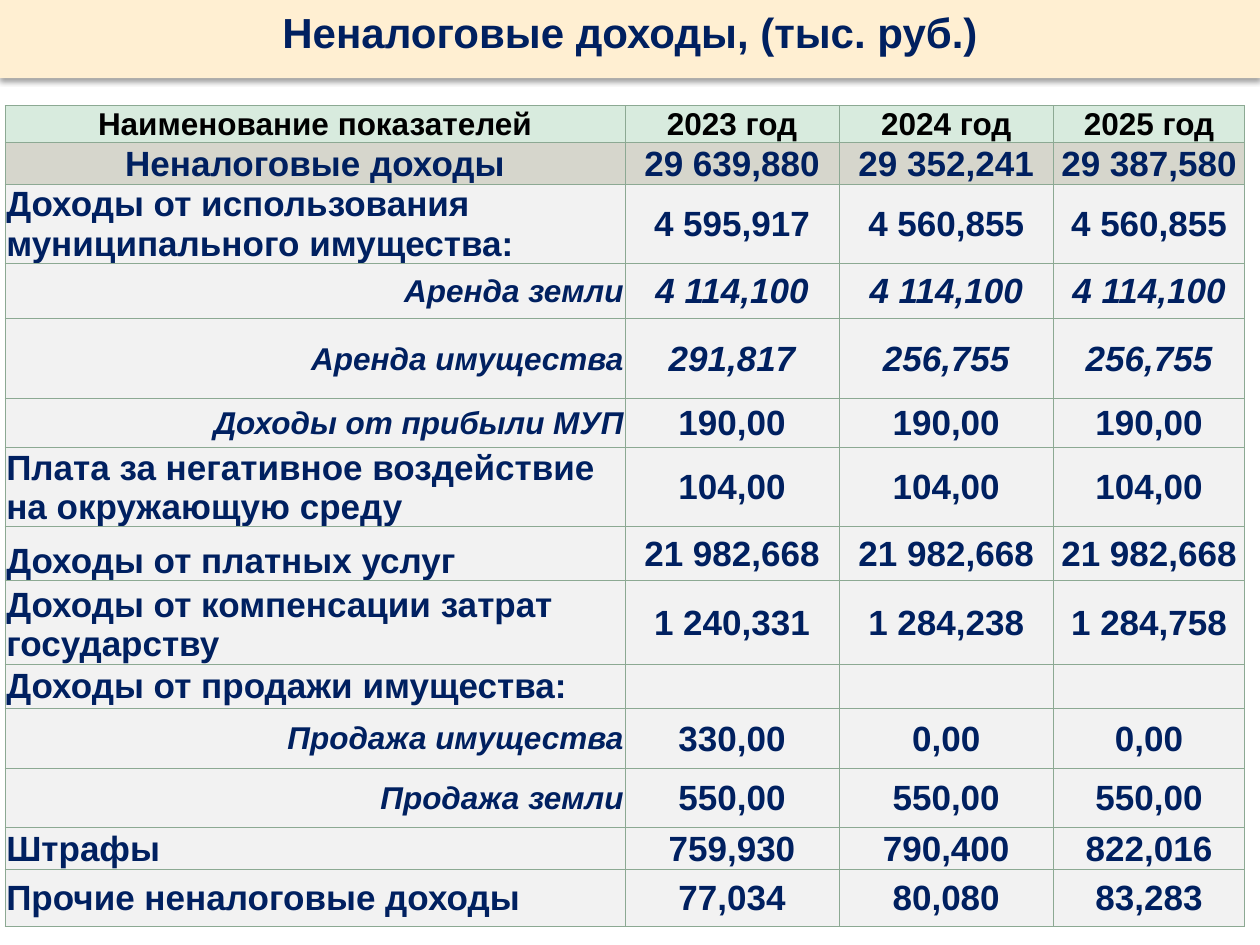
from lxml.etree import SubElement
from pptx import Presentation
from pptx.dml.color import RGBColor
from pptx.enum.text import MSO_ANCHOR, MSO_AUTO_SIZE, PP_ALIGN
from pptx.oxml import parse_xml
from pptx.oxml.ns import nsdecls, qn
from pptx.util import Inches, Pt

SLIDE_WIDTH, SLIDE_HEIGHT = Inches(10), Inches(7.5)
COLORS = {
    "navy": "002060", "black": "000000", "cream": "FFEFD2", "mint": "D8EBDE",
    "total": "D6D6CC", "body": "F2F2F2", "border": "8CA993",
}
COLUMN_WIDTHS = [4.92, 1.7, 1.7, 1.52]

# kind, row height, label, values for the three years
INCOME_ROWS = [
    ("header", 0.29, "Наименование показателей", ["2023 год", "2024 год", "2025 год"]),
    ("total", 0.33, "Неналоговые доходы", ["29 639,880", "29 352,241", "29 387,580"]),
    ("group", 0.63, "Доходы от использования муниципального имущества:",
     ["4 595,917", "4 560,855", "4 560,855"]),
    ("rent", 0.44, "Аренда земли", ["4 114,100"] * 3),
    ("rent", 0.63, "Аренда имущества", ["291,817", "256,755", "256,755"]),
    ("detail", 0.39, "Доходы от прибыли МУП", ["190,00"] * 3),
    ("group", 0.63, "Плата за негативное воздействие на окружающую среду", ["104,00"] * 3),
    ("group", 0.43, "Доходы от платных услуг", ["21 982,668"] * 3),
    ("group", 0.66, "Доходы от компенсации затрат государству",
     ["1 240,331", "1 284,238", "1 284,758"]),
    ("line", 0.33, "Доходы от продажи имущества:", ["", "", ""]),
    ("detail", 0.48, "Продажа имущества", ["330,00", "0,00", "0,00"]),
    ("detail", 0.47, "Продажа земли", ["550,00"] * 3),
    ("line", 0.33, "Штрафы", ["759,930", "790,400", "822,016"]),
    ("line", 0.45, "Прочие неналоговые доходы", ["77,034", "80,080", "83,283"]),
]

HEADER = {"size": 18, "color": "black"}
SUBITEM = {"size": 18, "italic": True, "align": PP_ALIGN.RIGHT}
LABEL_FORMATS = {
    "header": HEADER, "total": {}, "rent": SUBITEM, "detail": SUBITEM,
    "group": {"align": PP_ALIGN.LEFT}, "line": {"align": PP_ALIGN.LEFT},
}
VALUE_FORMATS = {"header": HEADER, "rent": {"italic": True}}
ROW_FILLS = {"header": "mint", "total": "total"}
BOTTOM_LABELS = {"total", "group"}


def rgb(name):
    return RGBColor.from_string(COLORS[name])


def write_text(frame, text, size=20, color="navy", italic=False, align=PP_ALIGN.CENTER):
    paragraph = frame.paragraphs[0]
    paragraph.alignment = align
    if not text:
        paragraph.font.size = Pt(size)
        return
    run = paragraph.add_run()
    run.text = text
    font = run.font
    font.name, font.size, font.bold, font.italic = "Arial", Pt(size), True, italic
    font.color.rgb = rgb(color)


def add_shadow(shape):
    shape._element.spPr.append(parse_xml(
        f'<a:effectLst {nsdecls("a")}>'
        f'<a:outerShdw blurRad="{Pt(3.1)}" dist="{Pt(2)}" dir="5400000" rotWithShape="0">'
        '<a:srgbClr val="000000"><a:alpha val="38000"/></a:srgbClr>'
        '</a:outerShdw></a:effectLst>'))


def format_title(title, text):
    title.left = title.top = 0
    title.width, title.height = SLIDE_WIDTH, Inches(0.62)
    title.fill.solid()
    title.fill.fore_color.rgb = rgb("cream")
    title.line.fill.background()
    add_shadow(title)
    frame = title.text_frame
    frame.auto_size = MSO_AUTO_SIZE.NONE
    frame.vertical_anchor = MSO_ANCHOR.TOP
    write_text(frame, text, size=24)


def add_borders(cell):
    properties = cell._tc.get_or_add_tcPr()
    for side in ("lnL", "lnR", "lnT", "lnB"):
        border = SubElement(properties, qn(f"a:{side}"), w=str(Pt(0.5)))
        fill = SubElement(border, qn("a:solidFill"))
        SubElement(fill, qn("a:srgbClr"), val=COLORS["border"])


def format_cell(cell, text, fill, anchor, text_format):
    cell.margin_left = cell.margin_right = cell.margin_top = Inches(0.01)
    cell.margin_bottom = 0
    cell.vertical_anchor = anchor
    add_borders(cell)
    cell.fill.solid()
    cell.fill.fore_color.rgb = rgb(fill)
    write_text(cell.text_frame, text, **text_format)


def add_income_table(slide):
    table_height = sum(height for _, height, _, _ in INCOME_ROWS)
    table = slide.shapes.add_table(
        len(INCOME_ROWS), len(COLUMN_WIDTHS), Inches(0.04), Inches(0.84),
        Inches(sum(COLUMN_WIDTHS)), Inches(table_height)).table
    for column, width in zip(table.columns, COLUMN_WIDTHS):
        column.width = Inches(width)
    for row, (kind, height, label, values) in zip(table.rows, INCOME_ROWS):
        row.height = Inches(height)
        fill = ROW_FILLS.get(kind, "body")
        label_cell, *value_cells = row.cells
        label_anchor = MSO_ANCHOR.BOTTOM if kind in BOTTOM_LABELS else MSO_ANCHOR.MIDDLE
        format_cell(label_cell, label, fill, label_anchor, LABEL_FORMATS[kind])
        for cell, value in zip(value_cells, values):
            format_cell(cell, value, fill, MSO_ANCHOR.MIDDLE, VALUE_FORMATS.get(kind, {}))


def main():
    presentation = Presentation()
    presentation.slide_width, presentation.slide_height = SLIDE_WIDTH, SLIDE_HEIGHT
    slide = presentation.slides.add_slide(presentation.slide_layouts[5])
    format_title(slide.shapes.title, "Неналоговые доходы, (тыс. руб.)")
    add_income_table(slide)
    presentation.save("out.pptx")


if __name__ == "__main__":
    main()
